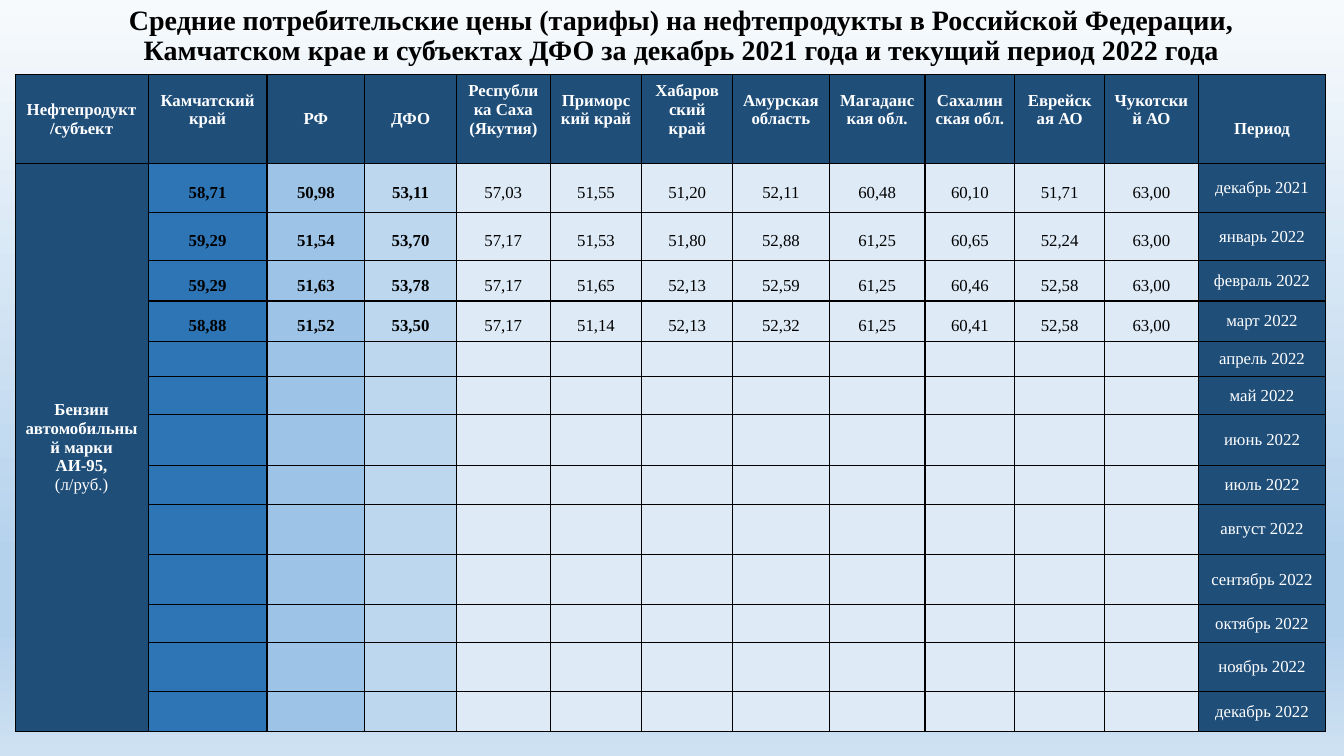
from lxml.etree import SubElement
from pptx import Presentation
from pptx.dml.color import RGBColor as Rgb
from pptx.enum.text import MSO_ANCHOR as Anchor, PP_ALIGN as Align
from pptx.oxml.ns import qn
from pptx.util import Pt

COLORS = {
    "dark": "1F4E79", "region": "2E75B6", "nation": "9DC3E6",
    "district": "BDD7EE", "pale": "DEEBF7", "white": "FFFFFF", "black": "000000",
}
SKY = [(0, "F7FAFD"), (74, "B5D2EC"), (83, "B5D2EC"), (100, "CEE1F2")]
FONT = "Times New Roman"
SIZE = 12
LINE = 13.3
PAD = 3.6

TITLE = ("Средние потребительские цены (тарифы) на нефтепродукты в Российской "
         "Федерации, Камчатском крае и субъектах ДФО за декабрь 2021 года "
         "и текущий период 2022 года")
HEADS = ["Нефтепродукт/субъект", "Камчатский край", "РФ", "ДФО",
         "Республика Саха (Якутия)", "Приморский край", "Хабаровский край",
         "Амурская область", "Магаданская обл.", "Сахалинская обл.",
         "Еврейская АО", "Чукотский АО", "Период"]
FUEL = "Бензин автомобильный марки\nАИ-95,\n(л/руб.)"
MONTHS = ["декабрь 2021"] + [m + " 2022" for m in (
    "январь", "февраль", "март", "апрель", "май", "июнь", "июль",
    "август", "сентябрь", "октябрь", "ноябрь", "декабрь")]
PRICES = [row.split() for row in (
    "58,71 50,98 53,11 57,03 51,55 51,20 52,11 60,48 60,10 51,71 63,00",
    "59,29 51,54 53,70 57,17 51,53 51,80 52,88 61,25 60,65 52,24 63,00",
    "59,29 51,63 53,78 57,17 51,65 52,13 52,59 61,25 60,46 52,58 63,00",
    "58,88 51,52 53,50 57,17 51,14 52,13 52,32 61,25 60,41 52,58 63,00",
)]
WIDTHS = [95, 85, 69.8, 65.5, 67, 65.5, 64.8, 69.1, 68.4, 64.1, 64.1, 67, 91]
HEIGHTS = [60.7, 34.6, 34.6, 27.1, 27.5, 25, 27.5, 36.4, 27.5,
           35.7, 36, 26.8, 35.4, 28.2]
FILLS = ["dark", "region", "nation", "district"] + ["pale"] * 8 + ["dark"]


def style(frame, size, color, bold, space=None):
    for par in frame.paragraphs:
        par.alignment = Align.CENTER
        par.line_spacing = space
        for run in par.runs:
            font = run.font
            font.name, font.size, font.bold = FONT, Pt(size), bold
            font.color.rgb = Rgb.from_string(COLORS[color])
        if not par.runs:
            SubElement(par._p, qn("a:endParaRPr"), sz=str(size * 100))


def paint_sky(slide):
    fill = slide.background.fill
    fill.gradient()
    fill.gradient_angle = 270
    stops = slide.background._cSld.find(".//" + qn("a:gsLst"))
    for old in list(stops):
        stops.remove(old)
    for pos, color in SKY:
        stop = SubElement(stops, qn("a:gs"), pos=str(pos * 1000))
        SubElement(stop, qn("a:srgbClr"), val=color)


def add_title(slide, left, top, width, height):
    box = slide.shapes.add_textbox(Pt(left), Pt(top), Pt(width), Pt(height))
    frame = box.text_frame
    frame.word_wrap = True
    frame.vertical_anchor = Anchor.MIDDLE
    frame.text = TITLE
    style(frame, 20, "black", True, 0.9)


def dress(cell, fill):
    """Give a cell its black borders, fill and vertical centring."""
    props = cell._tc.get_or_add_tcPr()
    for side in ("lnL", "lnR", "lnT", "lnB"):
        line = SubElement(props, qn("a:" + side), w=str(Pt(1)))
        solid = SubElement(line, qn("a:solidFill"))
        SubElement(solid, qn("a:srgbClr"), val=COLORS["black"])
    cell.fill.solid()
    cell.fill.fore_color.rgb = Rgb.from_string(COLORS[fill])
    cell.vertical_anchor = Anchor.MIDDLE


def fill_head(table):
    for col, head in enumerate(HEADS):
        cell = table.cell(0, col)
        cell.text = head
        style(cell.text_frame, SIZE, "white", True)
        if head == "Период":
            cell.margin_top = Pt(PAD + LINE)
        elif " " in head:
            cell.margin_bottom = Pt(PAD + LINE)


def fill_body(table):
    fuel = table.cell(1, 0)
    fuel.merge(table.cell(len(MONTHS), 0))
    fuel.text = FUEL
    style(fuel.text_frame, SIZE, "white", True)
    fuel.text_frame.paragraphs[-1].runs[0].font.bold = False
    blank = [""] * (len(HEADS) - 2)
    for num, month in enumerate(MONTHS):
        filled = num < len(PRICES)
        for col, price in enumerate(PRICES[num] if filled else blank, 1):
            cell = table.cell(num + 1, col)
            cell.text = price
            style(cell.text_frame, SIZE, "black", col < 4, 1.5 if filled else None)
        cell = table.cell(num + 1, len(HEADS) - 1)
        cell.text = month
        style(cell.text_frame, SIZE, "white", False)


def add_prices(slide, left, top):
    table = slide.shapes.add_table(
        len(HEIGHTS), len(WIDTHS), Pt(left), Pt(top),
        Pt(sum(WIDTHS)), Pt(sum(HEIGHTS))).table
    table.first_row = table.horz_banding = False
    for col, width in zip(table.columns, WIDTHS):
        col.width = Pt(width)
    for row, height in zip(table.rows, HEIGHTS):
        row.height = Pt(height)
    for row in range(len(HEIGHTS)):
        for col, fill in enumerate(FILLS):
            dress(table.cell(row, col), fill if row else "dark")
    fill_head(table)
    fill_body(table)


def main():
    deck = Presentation()
    deck.slide_width, deck.slide_height = Pt(960), Pt(540)
    slide = deck.slides.add_slide(deck.slide_layouts[6])
    paint_sky(slide)
    add_title(slide, 68.4, -1.4, 836.6, 55.4)
    add_prices(slide, 10.8, 53.3)
    deck.save("out.pptx")


if __name__ == "__main__":
    main()
